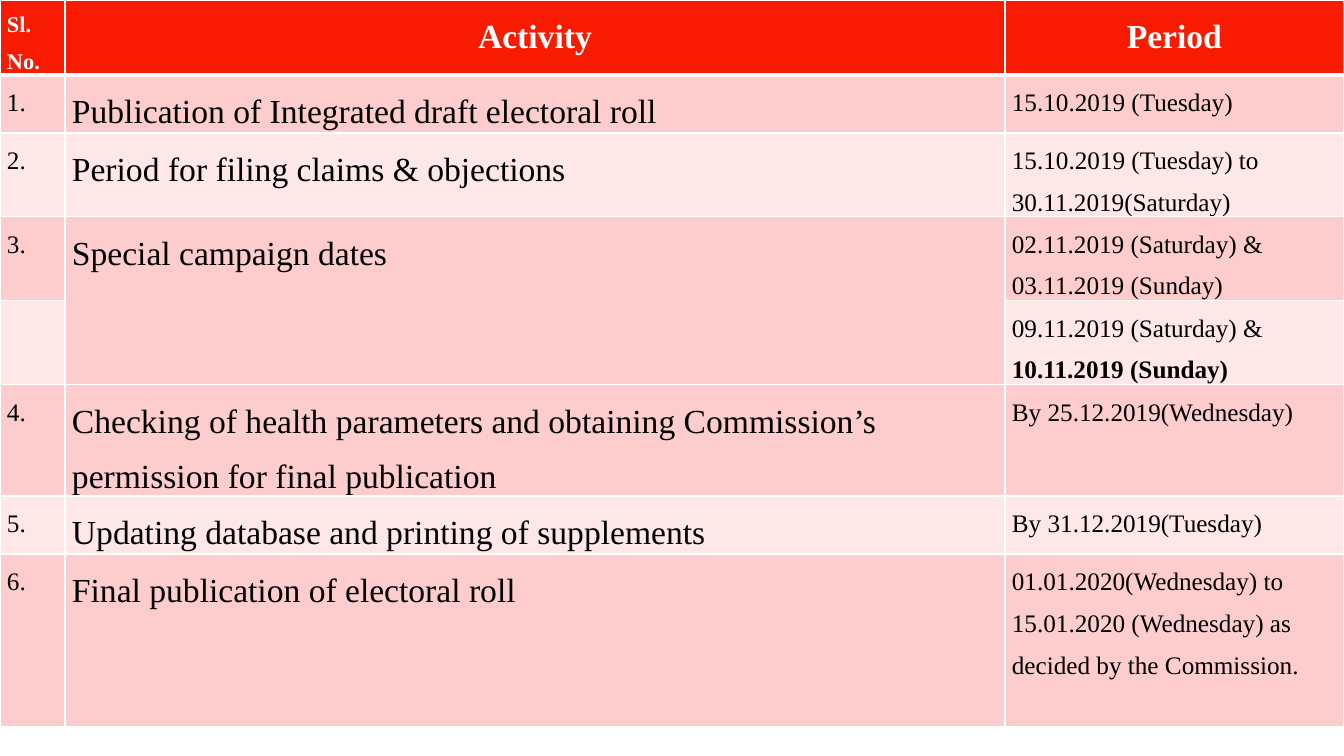
from dataclasses import dataclass

from lxml import etree
from pptx import Presentation
from pptx import util as u
from pptx.dml import color
from pptx.enum import text
from pptx.oxml import ns


@dataclass(frozen=True)
class Theme:
    font: str = "Times New Roman"
    header_fill: str = "F81B02"
    bands: tuple[str, str] = ("FCCDCC", "FEE8E7")
    border: str = "FFFFFF"
    header_ink: str = "FFFFFF"
    ink: str = "000000"
    number_header_size: int = 16
    activity_size: int = 24
    detail_size: int = 18
    line_spacing: float = 1.5


@dataclass(frozen=True)
class Entry:
    number: str
    activity: str
    period: tuple[str, ...]
    height: int
    bold_line: str = ""


THEME = Theme()
SLIDE_WIDTH, SLIDE_HEIGHT = 1344, 756
COLUMN_WIDTHS = (65, 940, 339)
HEADER_HEIGHT = 75
CELL_INSET = 7

SCHEDULE = (
    Entry("1.", "Publication of Integrated draft electoral roll", ("15.10.2019 (Tuesday)",), 58),
    Entry("2.", "Period for filing claims & objections",
          ("15.10.2019 (Tuesday) to", "30.11.2019(Saturday)"), 83),
    Entry("3.", "Special campaign dates", ("02.11.2019 (Saturday) &", "03.11.2019 (Sunday)"), 84),
    Entry("", "", ("09.11.2019 (Saturday) &", "10.11.2019 (Sunday)"), 84,
          bold_line="10.11.2019 (Sunday)"),
    Entry("4.", "Checking of health parameters and obtaining Commission’s permission for final publication",
          ("By 25.12.2019(Wednesday)",), 111),
    Entry("5.", "Updating database and printing of supplements", ("By 31.12.2019(Tuesday)",), 58),
    Entry("6.", "Final publication of electoral roll",
          ("01.01.2020(Wednesday) to 15.01.2020 (Wednesday) as decided by the Commission.",), 173),
)
CAMPAIGN_ROW = 3


def px(length: int) -> u.Emu:
    return u.Emu(round(length * 914400 / 100.8))


def style_cell(cell, fill: str, bottom_border: int = 1, top_border: int = 1) -> None:
    properties = cell._tc.get_or_add_tcPr()
    widths = {"a:lnL": 1, "a:lnR": 1, "a:lnT": top_border, "a:lnB": bottom_border}
    for tag, points in widths.items():
        edge = etree.SubElement(properties, ns.qn(tag), w=str(u.Pt(points)))
        solid = etree.SubElement(edge, ns.qn("a:solidFill"))
        etree.SubElement(solid, ns.qn("a:srgbClr"), val=THEME.border)
    cell.fill.solid()
    cell.fill.fore_color.rgb = color.RGBColor.from_string(fill)
    cell.margin_left = cell.margin_right = px(CELL_INSET)
    cell.margin_top = cell.margin_bottom = 0


def write_cell(cell, lines: tuple[str, ...], size: int, ink: str, bold: bool = False,
               centred: bool = False, bold_line: str = "") -> None:
    cell.text = "\n".join(lines)
    for paragraph, line in zip(cell.text_frame.paragraphs, lines):
        paragraph.line_spacing = THEME.line_spacing
        paragraph.alignment = text.PP_ALIGN.CENTER if centred else text.PP_ALIGN.LEFT
        font = paragraph.font
        font.name = THEME.font
        font.size = u.Pt(size)
        font.bold = bold or line == bold_line
        font.color.rgb = color.RGBColor.from_string(ink)


def add_header(table) -> None:
    table.rows[0].height = px(HEADER_HEIGHT)
    headings = (
        ("Sl. No.", THEME.number_header_size, False),
        ("Activity", THEME.activity_size, True),
        ("Period", THEME.activity_size, True),
    )
    for column, (heading, size, centred) in enumerate(headings):
        cell = table.cell(0, column)
        style_cell(cell, THEME.header_fill, bottom_border=3)
        write_cell(cell, (heading,), size, THEME.header_ink, bold=True, centred=centred)


def add_entry(table, row: int, entry: Entry) -> None:
    table.rows[row].height = px(entry.height)
    contents = (
        ((entry.number,), THEME.detail_size),
        ((entry.activity,), THEME.activity_size),
        (entry.period, THEME.detail_size),
    )
    for column, (lines, size) in enumerate(contents):
        cell = table.cell(row, column)
        style_cell(cell, THEME.bands[(row - 1) % 2], top_border=3 if row == 1 else 1)
        write_cell(cell, lines, size, THEME.ink, bold_line=entry.bold_line)


def main() -> None:
    presentation = Presentation()
    presentation.slide_width = px(SLIDE_WIDTH)
    presentation.slide_height = px(SLIDE_HEIGHT)
    slide = presentation.slides.add_slide(presentation.slide_layouts[6])
    table_height = HEADER_HEIGHT + sum(entry.height for entry in SCHEDULE)
    table = slide.shapes.add_table(
        len(SCHEDULE) + 1, len(COLUMN_WIDTHS), 0, 0, px(SLIDE_WIDTH), px(table_height)
    ).table
    for column, width in zip(table.columns, COLUMN_WIDTHS):
        column.width = px(width)
    add_header(table)
    for row, entry in enumerate(SCHEDULE, start=1):
        add_entry(table, row, entry)
    table.cell(CAMPAIGN_ROW, 1).merge(table.cell(CAMPAIGN_ROW + 1, 1))
    presentation.save("out.pptx")


if __name__ == "__main__":
    main()
